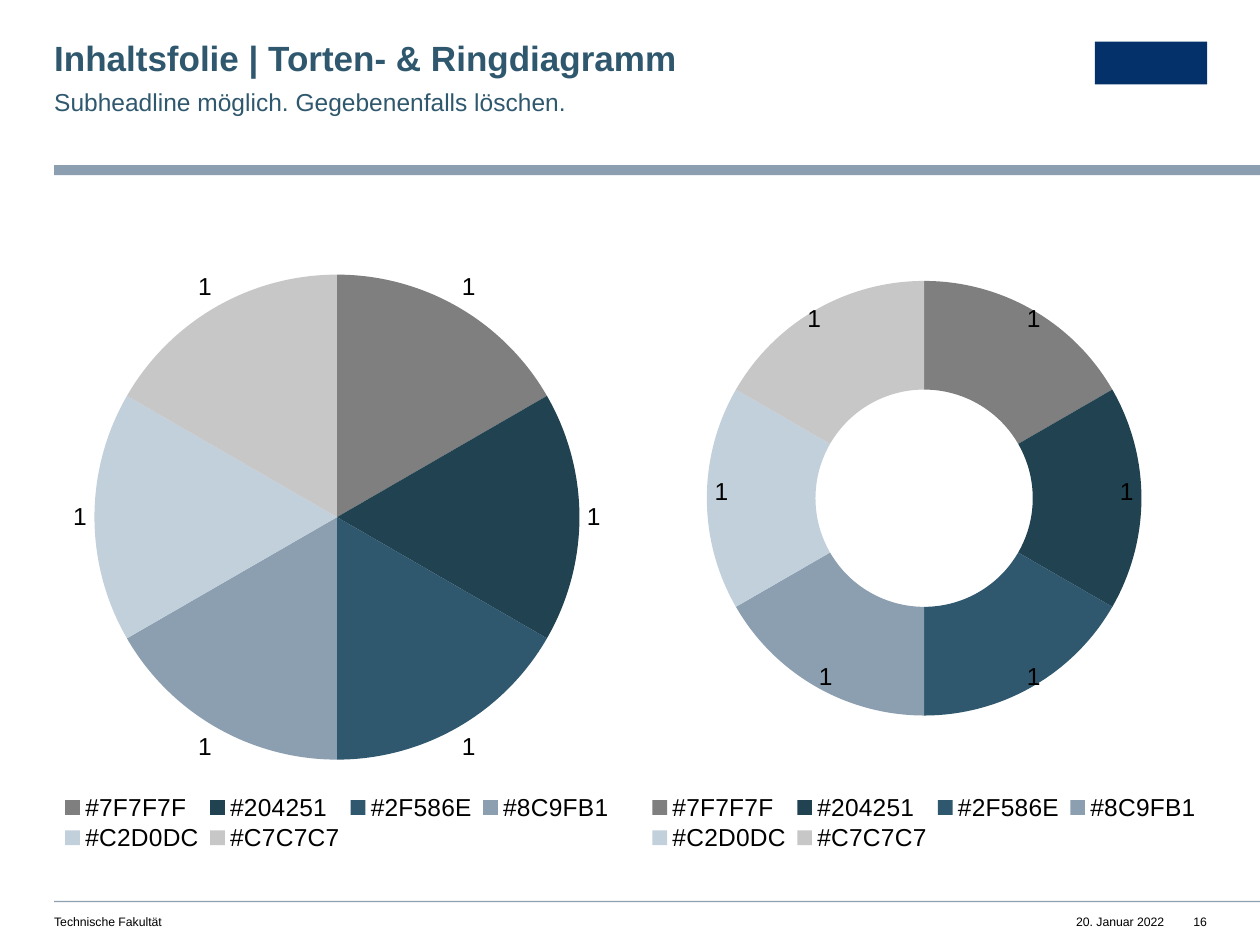
from lxml import etree
from pptx import Presentation
from pptx.chart.data import CategoryChartData
from pptx.dml.color import RGBColor
from pptx.enum.chart import XL_CHART_TYPE as Chart, XL_LABEL_POSITION as LabelPos, XL_LEGEND_POSITION as LegendPos
from pptx.enum.shapes import MSO_SHAPE as Shape
from pptx.enum.text import PP_ALIGN as Align
from pptx.oxml import parse_xml
from pptx.oxml.ns import nsdecls, qn
from pptx.util import Inches, Pt

FONT = "Arial"
COLORS = {"title": "2F586E", "bar": "8C9FB1", "logo": "04316A", "text": "000000"}
CATEGORIES = ["#7F7F7F", "#204251", "#2F586E", "#8C9FB1", "#C2D0DC", "#C7C7C7"]
VALUES = [1] * len(CATEGORIES)

BLOCKS = [
    ("bar", (0.43, 1.31, 9.57, 0.08)),
    ("bar", (0.43, 7.15, 9.57, 0.01)),
    ("logo", (8.69, 0.33, 0.89, 0.34)),
]
TEXTS = [
    ("Inhaltsfolie | Torten- & Ringdiagramm", (0.43, 0.33, 5.61, 0.3), "title", 20, True, {"line_spacing": 0.9}),
    ("Subheadline möglich. Gegebenenfalls löschen.", (0.43, 0.67, 5.61, 0.24), "title", 14, False,
     {"line_spacing": 1.1, "space_after": Pt(8)}),
    ("Technische Fakultät", (0.43, 7.26, 4.49, 0.12), "text", 7, False, {}),
    ("20. Januar 2022", (8.53, 7.26, 0.71, 0.12), "text", 7, False, {"alignment": Align.RIGHT}),
    ("16", (9.41, 7.26, 0.17, 0.12), "text", 7, False, {"alignment": Align.RIGHT}),
]
CHARTS = [
    (Chart.PIE, 0.43, {"x": 0.07, "y": 0.08, "w": 0.86, "h": 0.77}),
    (Chart.DOUGHNUT, 5.09, {"x": 0.11, "y": 0.09, "w": 0.78, "h": 0.69}),
]
CHART_TOP, CHART_WIDTH, CHART_HEIGHT = 1.78, 4.49, 5
LEGEND_AREA = {"x": 0, "y": 0.9, "w": 1, "h": 0.1}
RING_HOLE = 80
RING_LABEL_SHIFTS = [(0.05, -0.06), (0.07, -0.01), (0.05, 0.06), (-0.03, 0.06), (-0.07, -0.01), (-0.05, -0.06)]


def rgb(name):
    return RGBColor.from_string(COLORS[name])


def set_attrs(obj, values):
    for name, value in values.items():
        setattr(obj, name, value)


def set_font(font, size, color="text", bold=False):
    set_attrs(font, {"name": FONT, "size": Pt(size), "bold": bold})
    font.color.rgb = rgb(color)


def add_block(slide, color, box):
    sp = slide.shapes.add_shape(Shape.RECTANGLE, *map(Inches, box))
    sp.shadow.inherit = False
    sp.fill.solid()
    sp.fill.fore_color.rgb = rgb(color)
    sp.line.fill.background()


def add_text(slide, text, box, color, size, bold, formats):
    tf = slide.shapes.add_textbox(*map(Inches, box)).text_frame
    set_attrs(tf, dict.fromkeys(("margin_left", "margin_top", "margin_right", "margin_bottom"), 0))
    tf.word_wrap = "alignment" not in formats
    p = tf.paragraphs[0]
    set_attrs(p, formats)
    r = p.add_run()
    r.text = text
    set_font(r.font, size, color, bold)


def manual_layout(**values):
    xml = "".join(f'<c:{tag} val="{value}"/>' for tag, value in values.items())
    return f'<c:layout {nsdecls("c")}><c:manualLayout>{xml}</c:manualLayout></c:layout>'


def place(parent, index, **values):
    for old in parent.findall(qn("c:layout")):
        parent.remove(old)
    parent.insert(index, parse_xml(manual_layout(**values)))


def shape_ring(chart, labels):
    chart.plots[0]._element.find(qn("c:holeSize")).set("val", str(RING_HOLE))
    flags = "".join(
        f'<c:show{flag} val="{int(flag == "Val")}"/>'
        for flag in ("LegendKey", "Val", "CatName", "SerName", "Percent", "BubbleSize")
    )
    for i, (x, y) in enumerate(RING_LABEL_SHIFTS):
        layout = manual_layout(x=x, y=y)
        label = etree.fromstring(f'<c:dLbl {nsdecls("c")}><c:idx val="{i}"/>{layout}{flags}</c:dLbl>')
        labels._element.insert(i, label)


def add_round_chart(slide, kind, left, plot_area):
    data = CategoryChartData()
    data.categories = CATEGORIES
    data.add_series("Series 1", VALUES)
    box = (left, CHART_TOP, CHART_WIDTH, CHART_HEIGHT)
    chart = slide.shapes.add_chart(kind, *map(Inches, box), data).chart
    set_attrs(chart, {"has_title": False, "has_legend": True})
    set_font(chart.font, 10)
    set_attrs(chart.legend, {"position": LegendPos.BOTTOM, "include_in_layout": False})
    set_font(chart.legend.font, 14)
    plot = chart.plots[0]
    plot.vary_by_categories = True
    place(plot._element.getparent(), 0, layoutTarget="inner", xMode="edge", yMode="edge", **plot_area)
    place(chart.legend._element, 1, xMode="edge", yMode="edge", **LEGEND_AREA)
    series = plot.series[0]
    for i, code in enumerate(CATEGORIES):
        fill = series.points[i].format.fill
        fill.solid()
        fill.fore_color.rgb = RGBColor.from_string(code.lstrip("#"))
    labels = series.data_labels
    labels.show_value = True
    set_font(labels.font, 14)
    if kind == Chart.PIE:
        labels.position = LabelPos.OUTSIDE_END
    else:
        shape_ring(chart, labels)


def main():
    """Build the slide with a pie chart and a ring chart."""
    prs = Presentation()
    set_attrs(prs, {"slide_width": Inches(10), "slide_height": Inches(7.5)})
    slide = prs.slides.add_slide(prs.slide_layouts[6])
    for block in BLOCKS:
        add_block(slide, *block)
    for text in TEXTS:
        add_text(slide, *text)
    for chart in CHARTS:
        add_round_chart(slide, *chart)
    prs.save("out.pptx")


if __name__ == "__main__":
    main()
